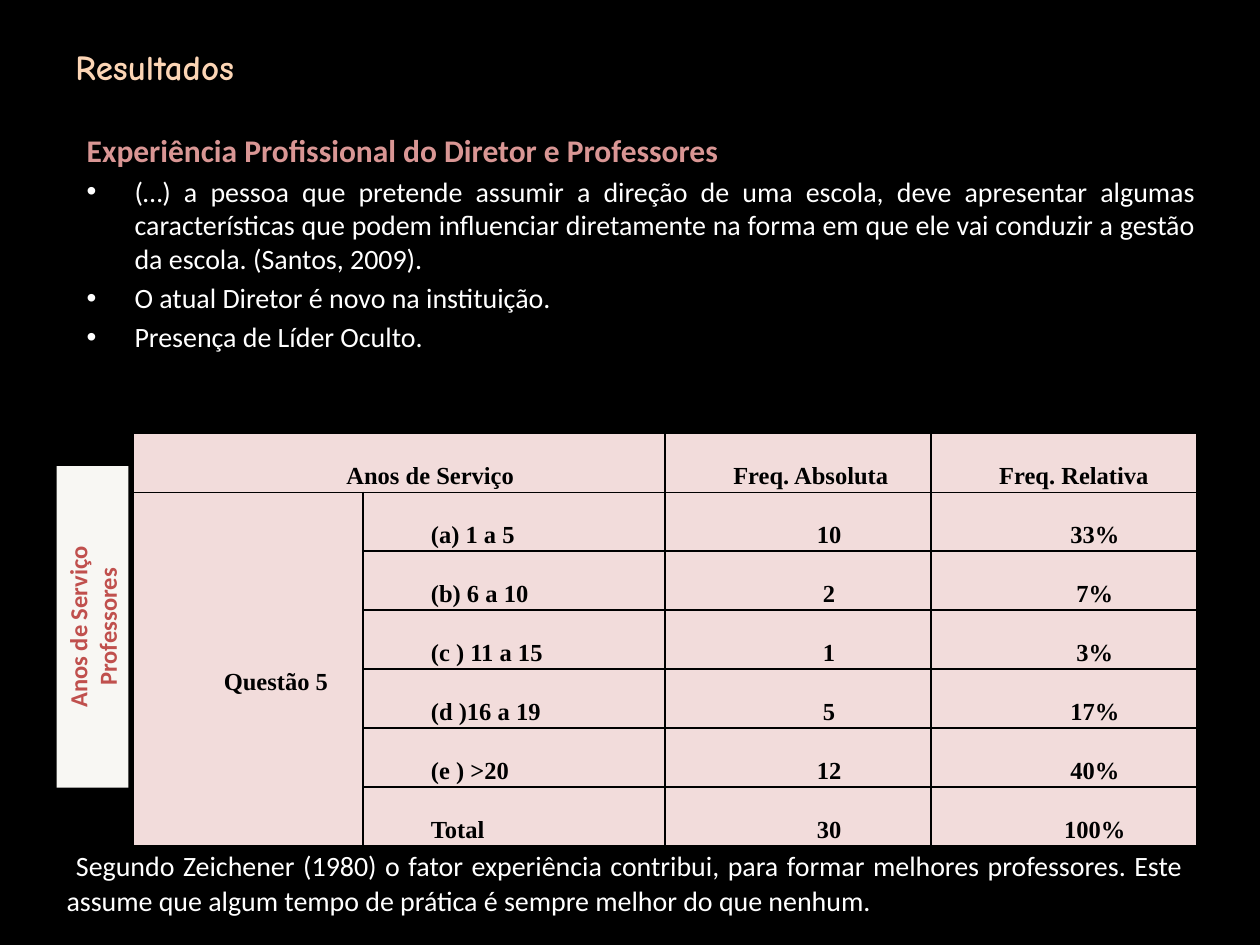
from lxml.etree import SubElement
from pptx import Presentation
from pptx.dml.color import RGBColor
from pptx.enum.shapes import MSO_SHAPE
from pptx.enum.text import MSO_ANCHOR, PP_ALIGN
from pptx.oxml.ns import qn
from pptx.util import Inches, Pt

COLUMNS, ROWS = 100, 75  # square grid, ten units to the inch
BLACK, WHITE, PEACH = "000000", "FFFFFF", "FCD5B5"
ROSE, RED, PALE_PINK, IVORY = "D99694", "C0504D", "F2DCDB", "F8F7F3"

TOPICS = [
    "(…) a pessoa que pretende assumir a direção de uma escola, deve apresentar "
    "algumas características que podem influenciar diretamente na forma em que "
    "ele vai conduzir a gestão da escola. (Santos, 2009).",
    "O atual Diretor é novo na instituição.",
    "Presença de Líder Oculto.",
]
CONCLUSION = (
    "Segundo Zeichener (1980) o fator experiência contribui, para formar melhores "
    "professores. Este assume que algum tempo de prática é sempre melhor do que nenhum."
)
HEADINGS = ["Anos de Serviço", "", "Freq. Absoluta", "Freq. Relativa"]
FREQUENCIES = [
    ("(a) 1 a 5", "10", "33%"),
    ("(b) 6 a 10", "2", "7%"),
    ("(c ) 11 a 15", "1", "3%"),
    ("(d )16 a 19", "5", "17%"),
    ("(e ) >20", "12", "40%"),
    ("Total", "30", "100%"),
]
SERVICE_COLUMNS = [18.2, 24, 21.1, 21.1]
SERVICE_ROW = 4.3


def color(hex_code):
    return RGBColor.from_string(hex_code)


def grid(*units):
    return [Inches(unit / 10) for unit in units]


def add_run(paragraph, text, size, hex_code, font="Calibri", bold=False):
    run = paragraph.add_run()
    run.text = text
    run.font.size, run.font.name, run.font.bold = Pt(size), font, bold
    run.font.color.rgb = color(hex_code)


def indent(paragraph, first_line, margin=0):
    properties = paragraph._p.get_or_add_pPr()
    properties.set("marL", str(Inches(margin)))
    properties.set("indent", str(Inches(first_line)))
    return properties


def add_text_area(slide, *place, anchor=MSO_ANCHOR.TOP):
    frame = slide.shapes.add_textbox(*grid(*place)).text_frame
    frame.word_wrap = True
    frame.vertical_anchor = anchor
    return frame


def add_title(slide):
    frame = add_text_area(slide, 5, 3, 90, 4.6, anchor=MSO_ANCHOR.MIDDLE)
    add_run(frame.paragraphs[0], "Resultados", 20, PEACH, "Comic Neue", True)


def add_topics(slide):
    frame = add_text_area(slide, 5.9, 9.9, 90, 59.1)
    subtitle = frame.paragraphs[0]
    subtitle.space_before = Pt(0.2 * 18)
    add_run(subtitle, "Experiência Profissional do Diretor e Professores", 18, ROSE, bold=True)
    for topic in TOPICS:
        paragraph = frame.add_paragraph()
        paragraph.alignment = PP_ALIGN.JUSTIFY
        paragraph.space_before = Pt(0.2 * 16)
        properties = indent(paragraph, -0.38, 0.38)
        SubElement(properties, qn("a:buFont"), typeface="Arial")
        SubElement(properties, qn("a:buChar"), char="•")
        add_run(paragraph, topic, 16, WHITE)


def add_borders(cell):
    properties = cell._tc.get_or_add_tcPr()
    for side in ("lnL", "lnR", "lnT", "lnB"):
        line = SubElement(properties, qn(f"a:{side}"), w=str(Pt(1)))
        SubElement(SubElement(line, qn("a:solidFill")), qn("a:srgbClr"), val=BLACK)


def fill_cell(cell, text, centred):
    add_borders(cell)
    cell.fill.solid()
    cell.fill.fore_color.rgb = color(PALE_PINK)
    cell.vertical_anchor = MSO_ANCHOR.MIDDLE
    cell.margin_left = cell.margin_right = Inches(0.05)
    cell.margin_top = cell.margin_bottom = 0
    if text:
        paragraph = cell.text_frame.paragraphs[0]
        paragraph.alignment = PP_ALIGN.CENTER if centred else PP_ALIGN.LEFT
        paragraph.line_spacing = 2.0
        indent(paragraph, 0.49)
        add_run(paragraph, text, 14, BLACK, "Times New Roman", True)


def add_service_table(slide):
    records = [HEADINGS] + [("", *record) for record in FREQUENCIES]
    records[1] = ("Questão 5 ", *FREQUENCIES[0])
    place = grid(10.6, 34.4, sum(SERVICE_COLUMNS), SERVICE_ROW * len(records))
    table = slide.shapes.add_table(len(records), len(HEADINGS), *place).table
    for column, width in zip(table.columns, grid(*SERVICE_COLUMNS)):
        column.width = width
    for r, record in enumerate(records):
        for c, text in enumerate(record):
            centred = c == 0 or (r > 0 and c > 1)
            fill_cell(table.cell(r, c), text, centred)
    table.cell(0, 0).merge(table.cell(0, 1))
    table.cell(1, 0).merge(table.cell(len(FREQUENCIES), 0))


def add_side_label(slide):
    label = slide.shapes.add_shape(MSO_SHAPE.RECTANGLE, *grid(-5.4, 46.9, 25.5, 5.7))
    label.rotation = 270
    label.shadow.inherit = False
    label.fill.solid()
    label.fill.fore_color.rgb = color(IVORY)
    label.line.fill.background()
    frame = label.text_frame
    frame.word_wrap = True
    frame.vertical_anchor = MSO_ANCHOR.TOP
    for paragraph, text in ((frame.paragraphs[0], "Anos de Serviço"),
                            (frame.add_paragraph(), "Professores")):
        paragraph.alignment = PP_ALIGN.CENTER
        add_run(paragraph, text, 14, RED, bold=True)


def add_conclusion(slide):
    paragraph = add_text_area(slide, 4.3, 66.6, 90.6, 6.7).paragraphs[0]
    paragraph.alignment = PP_ALIGN.JUSTIFY
    add_run(paragraph, " ", 18, WHITE)
    add_run(paragraph, CONCLUSION, 16, WHITE)


def main():
    presentation = Presentation()
    presentation.slide_width, presentation.slide_height = grid(COLUMNS, ROWS)
    slide = presentation.slides.add_slide(presentation.slide_layouts[6])
    slide.background.fill.solid()
    slide.background.fill.fore_color.rgb = color(BLACK)
    add_title(slide)
    add_topics(slide)
    add_service_table(slide)
    add_conclusion(slide)
    add_side_label(slide)
    presentation.save("out.pptx")


if __name__ == "__main__":
    main()
